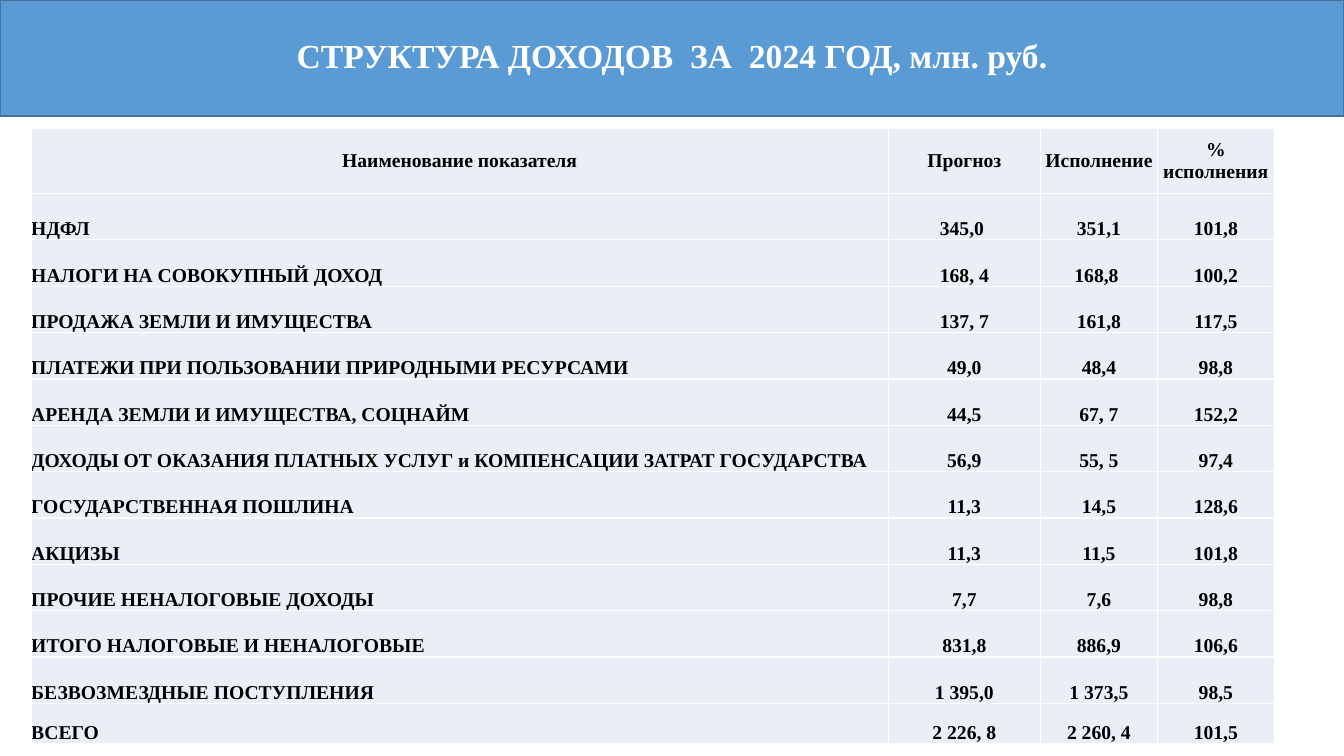
from lxml import etree
from pptx import Presentation
from pptx import util as u
from pptx.dml.color import RGBColor
from pptx.enum import text
from pptx.oxml import ns

BLUE = RGBColor(0x5B, 0x9B, 0xD5)
DARK_BLUE = RGBColor(0x43, 0x73, 0x9E)
PALE = RGBColor(0xEA, 0xEF, 0xF7)
WHITE = RGBColor(0xFF, 0xFF, 0xFF)
BLACK = RGBColor(0, 0, 0)

COLUMN_WIDTHS = [8.5, 1.51, 1.16, 1.16]
HEADER_HEIGHT, ROW_HEIGHT, TOTAL_HEIGHT = 0.65, 0.46, 0.4
ROWS = [
    ("Наименование показателя", "Прогноз", "Исполнение", "% исполнения"),
    ("НДФЛ", "345,0 ", "351,1", "101,8"),
    ("НАЛОГИ НА СОВОКУПНЫЙ ДОХОД", "168, 4", "168,8 ", "100,2"),
    ("ПРОДАЖА ЗЕМЛИ И ИМУЩЕСТВА", "137, 7", "161,8", "117,5"),
    ("ПЛАТЕЖИ ПРИ ПОЛЬЗОВАНИИ ПРИРОДНЫМИ РЕСУРСАМИ", "49,0", "48,4", "98,8"),
    ("АРЕНДА ЗЕМЛИ И ИМУЩЕСТВА, СОЦНАЙМ", "44,5", "67, 7", "152,2"),
    ("ДОХОДЫ ОТ ОКАЗАНИЯ ПЛАТНЫХ УСЛУГ и КОМПЕНСАЦИИ ЗАТРАТ ГОСУДАРСТВА",
     "56,9", "55, 5", "97,4"),
    ("ГОСУДАРСТВЕННАЯ ПОШЛИНА", "11,3", "14,5", "128,6"),
    ("АКЦИЗЫ", "11,3", "11,5", "101,8"),
    ("ПРОЧИЕ НЕНАЛОГОВЫЕ ДОХОДЫ", "7,7", "7,6", "98,8"),
    ("ИТОГО НАЛОГОВЫЕ И НЕНАЛОГОВЫЕ", "831,8", "886,9", "106,6"),
    ("БЕЗВОЗМЕЗДНЫЕ ПОСТУПЛЕНИЯ", "1 395,0", "1 373,5", "98,5"),
    ("ВСЕГО", "2 226, 8", "2 260, 4", "101,5"),
]


def style_paragraph(para, size, color, align):
    para.alignment = align
    para.font.name = "Times New Roman"
    para.font.size = u.Pt(size)
    para.font.bold = True
    para.font.color.rgb = color


def add_borders(cell, color):
    properties = cell._tc.get_or_add_tcPr()
    for side in ("a:lnL", "a:lnR", "a:lnT", "a:lnB"):
        line = etree.SubElement(properties, ns.qn(side), w=str(u.Pt(1)))
        fill = etree.SubElement(line, ns.qn("a:solidFill"))
        etree.SubElement(fill, ns.qn("a:srgbClr"), val=str(color))


deck = Presentation()
deck.slide_width, deck.slide_height = u.Inches(13.33), u.Inches(7.5)
page = deck.slides.add_slide(deck.slide_layouts[5])

# Title band across the full width
title = page.shapes.title
title.left, title.top = 0, 0
title.width, title.height = deck.slide_width, u.Inches(1.15)
title.fill.solid()
title.fill.fore_color.rgb = BLUE
title.line.color.rgb = DARK_BLUE
title.line.width = u.Pt(1)
title.text_frame.text = "СТРУКТУРА ДОХОДОВ  ЗА  2024 ГОД, млн. руб."
title.text_frame.vertical_anchor = text.MSO_ANCHOR.MIDDLE
heading = title.text_frame.paragraphs[0]
heading.line_spacing = 0.9
style_paragraph(heading, 24, WHITE, text.PP_ALIGN.CENTER)

# Income table
heights = [HEADER_HEIGHT] + [ROW_HEIGHT] * (len(ROWS) - 2) + [TOTAL_HEIGHT]
table = page.shapes.add_table(
    len(ROWS), len(COLUMN_WIDTHS), u.Inches(0.31), u.Inches(1.27),
    u.Inches(sum(COLUMN_WIDTHS)), u.Inches(sum(heights))).table
table.first_row = False
table.horz_banding = False
for column, width in zip(table.columns, COLUMN_WIDTHS):
    column.width = u.Inches(width)

for r, (values, height) in enumerate(zip(ROWS, heights)):
    table.rows[r].height = u.Inches(height)
    for c, value in enumerate(values):
        cell = table.cell(r, c)
        cell.text = value
        cell.margin_left = cell.margin_right = 0
        cell.margin_top = cell.margin_bottom = 0
        cell.vertical_anchor = text.MSO_ANCHOR.BOTTOM if r else text.MSO_ANCHOR.MIDDLE
        add_borders(cell, WHITE)
        cell.fill.solid()
        cell.fill.fore_color.rgb = PALE
        is_name = r > 0 and c == 0
        align = text.PP_ALIGN.LEFT if is_name else text.PP_ALIGN.CENTER
        style_paragraph(cell.text_frame.paragraphs[0], 14, BLACK, align)

deck.save("out.pptx")
